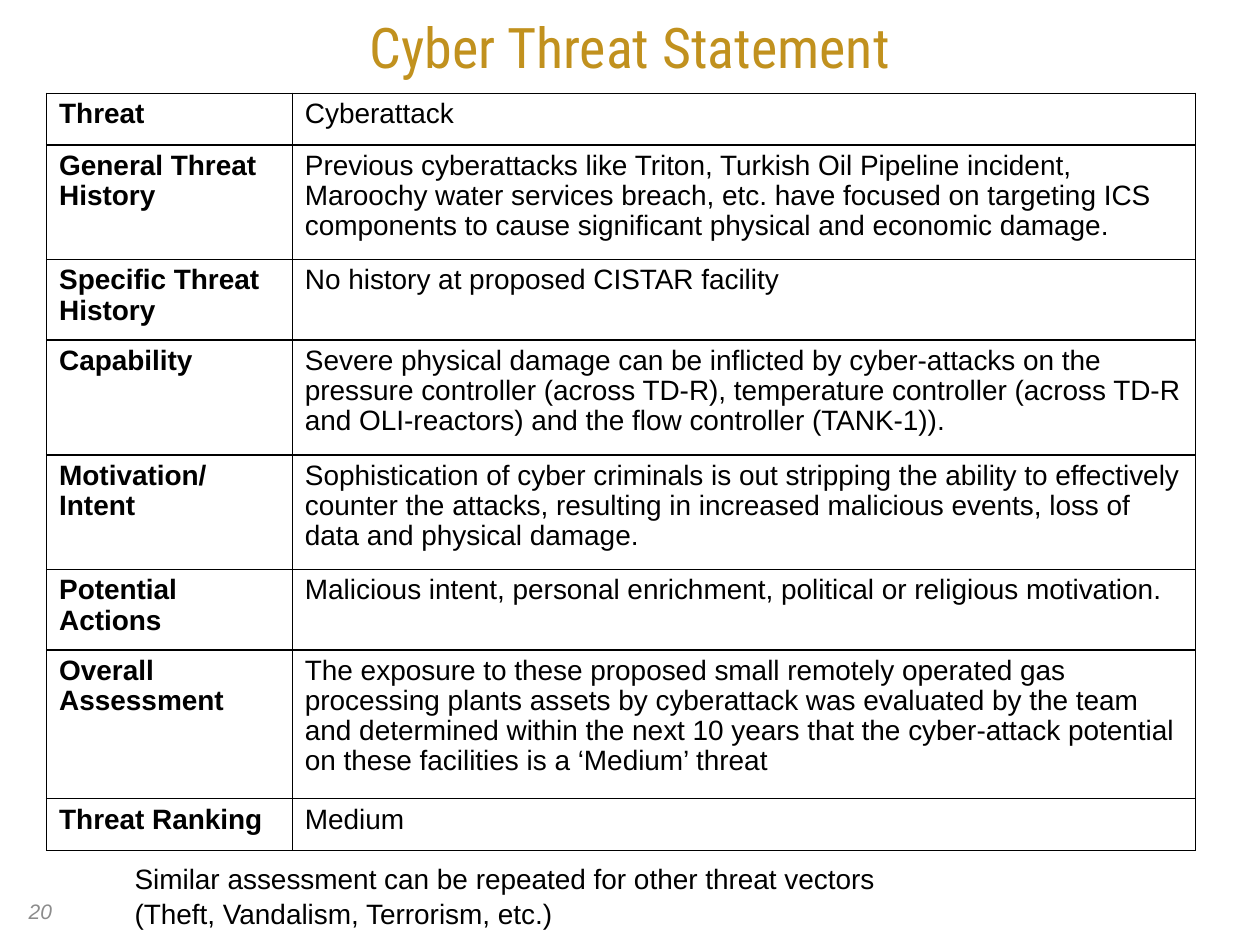
from dataclasses import dataclass

from lxml.etree import SubElement
from pptx import Presentation
from pptx.dml.color import RGBColor
from pptx.enum.text import MSO_ANCHOR, PP_ALIGN
from pptx.oxml.ns import qn
from pptx.util import Inches, Pt


@dataclass(frozen=True)
class Theme:
    gold: RGBColor = RGBColor(0xC1, 0x91, 0x1E)
    black: RGBColor = RGBColor(0, 0, 0)
    gray: RGBColor = RGBColor(0x8C, 0x8C, 0x8C)
    heading_face: str = "Roboto Condensed"
    body_face: str = "Arial"
    title_size: int = 32
    body_size: int = 16
    number_size: int = 12
    border_width: int = 1
    table_spacing: float = 0.97
    note_spacing: float = 1.06


@dataclass(frozen=True)
class Criterion:
    label: str
    finding: str
    lines: int


THEME = Theme()
COLUMN_WIDTHS = (1.95, 7.17)
MIN_ROW, LINE_HEIGHT, ROW_PADDING = 0.41, 0.27, 0.1

CRITERIA = (
    Criterion("Threat", "Cyberattack", 1),
    Criterion("General Threat History",
              "Previous cyberattacks like Triton, Turkish Oil Pipeline incident, "
              "Maroochy water services breach, etc. have focused on targeting ICS "
              "components to cause significant physical and economic damage.", 3),
    Criterion("Specific Threat History", "No history at proposed CISTAR facility", 2),
    Criterion("Capability",
              "Severe physical damage can be inflicted by cyber-attacks on the "
              "pressure controller (across TD-R), temperature controller (across TD-R "
              "and OLI-reactors) and the flow controller (TANK-1)).", 3),
    Criterion("Motivation/\nIntent",
              "Sophistication of cyber criminals is out stripping the ability to "
              "effectively counter the attacks, resulting in increased malicious "
              "events, loss of data and physical damage.", 3),
    Criterion("Potential Actions",
              "Malicious intent, personal enrichment, political or religious motivation.", 2),
    Criterion("Overall Assessment",
              "The exposure to these proposed small remotely operated gas processing "
              "plants assets by cyberattack was evaluated by the team and determined "
              "within the next 10 years that the cyber-attack potential on these "
              "facilities is a ‘Medium’ threat", 4),
    Criterion("Threat Ranking", "Medium", 1),
)


def write(frame, text: str, size: int, color: RGBColor, face: str = THEME.body_face,
          bold: bool = False, italic: bool = False, spacing: float = 1.0) -> None:
    frame.text = text
    for paragraph in frame.paragraphs:
        paragraph.line_spacing = spacing
        font = paragraph.font
        font.name, font.size, font.color.rgb = face, Pt(size), color
        font.bold, font.italic = bold, italic


def add_title(slide, text: str) -> None:
    title = slide.shapes.title
    title.left, title.top = Inches(0), Inches(0.07)
    title.width, title.height = Inches(10), Inches(0.59)
    frame = title.text_frame
    frame.margin_left = frame.margin_top = frame.margin_right = frame.margin_bottom = 0
    frame.vertical_anchor = MSO_ANCHOR.MIDDLE
    write(frame, text, THEME.title_size, THEME.gold, THEME.heading_face)
    frame.paragraphs[0].alignment = PP_ALIGN.CENTER


def add_text_frame(slide, left: float, top: float, width: float, height: float):
    frame = slide.shapes.add_textbox(
        Inches(left), Inches(top), Inches(width), Inches(height)).text_frame
    frame.word_wrap = True
    return frame


def outline(cell) -> None:
    properties = cell._tc.get_or_add_tcPr()
    for side in ("a:lnL", "a:lnR", "a:lnT", "a:lnB"):
        line = SubElement(properties, qn(side), w=str(Pt(THEME.border_width)))
        fill = SubElement(line, qn("a:solidFill"))
        SubElement(fill, qn("a:srgbClr"), val=str(THEME.black))


def add_threat_table(slide, criteria: tuple[Criterion, ...]) -> None:
    heights = [max(MIN_ROW, ROW_PADDING + LINE_HEIGHT * c.lines) for c in criteria]
    table = slide.shapes.add_table(
        len(criteria), len(COLUMN_WIDTHS), Inches(0.37), Inches(0.74),
        Inches(sum(COLUMN_WIDTHS)), Inches(sum(heights))).table
    table.first_row = table.horz_banding = False
    for column, width in zip(table.columns, COLUMN_WIDTHS):
        column.width = Inches(width)
    for row, height, criterion in zip(table.rows, heights, criteria):
        row.height = Inches(height)
        for cell, text in zip(row.cells, (criterion.label, criterion.finding)):
            write(cell.text_frame, text, THEME.body_size, THEME.black,
                  bold=text is criterion.label, spacing=THEME.table_spacing)
            outline(cell)
            cell.fill.background()


def main() -> None:
    deck = Presentation()
    deck.slide_width, deck.slide_height = Inches(10), Inches(7.5)
    slide = deck.slides.add_slide(deck.slide_layouts[5])

    page_number = add_text_frame(slide, 0.13, 7.03, 2.33, 0.4)
    page_number.vertical_anchor = MSO_ANCHOR.MIDDLE
    write(page_number, "20", THEME.number_size, THEME.gray, italic=True)

    add_title(slide, "Cyber Threat Statement")
    add_threat_table(slide, CRITERIA)

    note = add_text_frame(slide, 0.97, 6.77, 6.34, 0.64)
    write(note, "Similar assessment can be repeated for other threat vectors "
                "(Theft, Vandalism, Terrorism, etc.)",
          THEME.body_size, THEME.black, spacing=THEME.note_spacing)

    deck.save("out.pptx")


if __name__ == "__main__":
    main()
